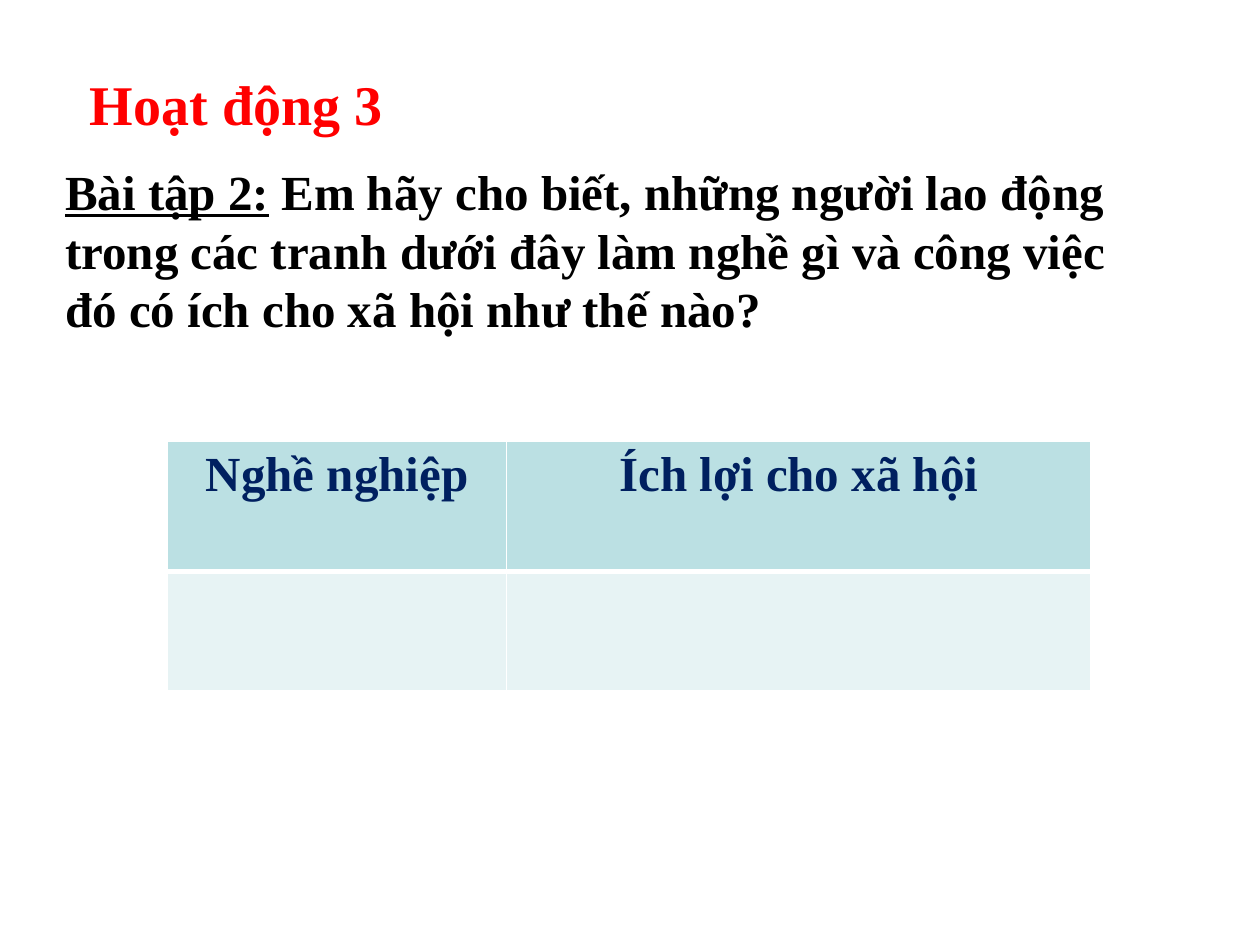
from lxml.etree import SubElement
from pptx import Presentation
from pptx.dml.color import RGBColor as Rgb
from pptx.enum.text import PP_ALIGN as Align
from pptx.oxml.ns import qn
from pptx.util import Inches, Pt

WIDTH, HEIGHT = Inches(10), Inches(7.5)
COLORS = {
    "heading": "FF0000",
    "body": "000000",
    "header_text": "002060",
    "header_fill": "BBE0E3",
    "row_fill": "E7F3F4",
    "border": "FFFFFF",
}
COLUMN_SHARES = (0.269, 0.464)
ROW_SHARES = (0.138, 0.126)
HEADERS = ("Nghề nghiệp", "Ích lợi cho xã hội")


def add_run(paragraph, words, color, size=28, **extra):
    run = paragraph.add_run()
    run.text = words
    formats = {"name": "Times New Roman", "size": Pt(size), "bold": True, **extra}
    for key, value in formats.items():
        setattr(run.font, key, value)
    run.font.color.rgb = Rgb.from_string(COLORS[color])


def add_exercise(slide):
    box = slide.shapes.add_textbox(
        int(WIDTH * 0.042), int(HEIGHT * 0.067), int(WIDTH * 0.883), int(HEIGHT * 0.305)
    )
    frame = box.text_frame
    frame.word_wrap = True

    heading = frame.paragraphs[0]
    heading._p.get_or_add_pPr().set("marL", str(Pt(14)))
    add_run(heading, "Hoạt động 3", "heading", size=32)

    question = frame.add_paragraph()
    question.space_before = Pt(14)
    add_run(question, "Bài tập 2:", "body", underline=True)
    add_run(
        question,
        " Em hãy cho biết, những người lao động trong các tranh dưới đây "
        "làm nghề gì và công việc đó có ích cho xã hội như thế nào?",
        "body",
    )


def style_cell(cell, fill, borders):
    properties = cell._tc.get_or_add_tcPr()
    for side, width in borders.items():
        line = SubElement(properties, qn(f"a:ln{side}"), w=str(Pt(width)))
        paint = SubElement(line, qn("a:solidFill"))
        SubElement(paint, qn("a:srgbClr"), val=COLORS["border"])
    cell.fill.solid()
    cell.fill.fore_color.rgb = Rgb.from_string(COLORS[fill])


def add_jobs_table(slide):
    table = slide.shapes.add_table(
        len(ROW_SHARES), len(COLUMN_SHARES),
        int(WIDTH * 0.133), int(HEIGHT * 0.467),
        int(WIDTH * sum(COLUMN_SHARES)), int(HEIGHT * sum(ROW_SHARES)),
    ).table
    for column, share in zip(table.columns, COLUMN_SHARES):
        column.width = int(WIDTH * share)
    for row, share in zip(table.rows, ROW_SHARES):
        row.height = int(HEIGHT * share)

    header_row, answer_row = table.rows
    for cell, title in zip(header_row.cells, HEADERS):
        style_cell(cell, "header_fill", {"L": 1, "R": 1, "T": 1, "B": 3})
        paragraph = cell.text_frame.paragraphs[0]
        paragraph.alignment = Align.CENTER
        add_run(paragraph, title, "header_text")
    for cell in answer_row.cells:
        style_cell(cell, "row_fill", {"L": 1, "R": 1, "T": 3, "B": 1})


def main():
    deck = Presentation()
    deck.slide_width, deck.slide_height = WIDTH, HEIGHT
    slide = deck.slides.add_slide(deck.slide_layouts[6])
    add_exercise(slide)
    add_jobs_table(slide)
    deck.save("out.pptx")


if __name__ == "__main__":
    main()
